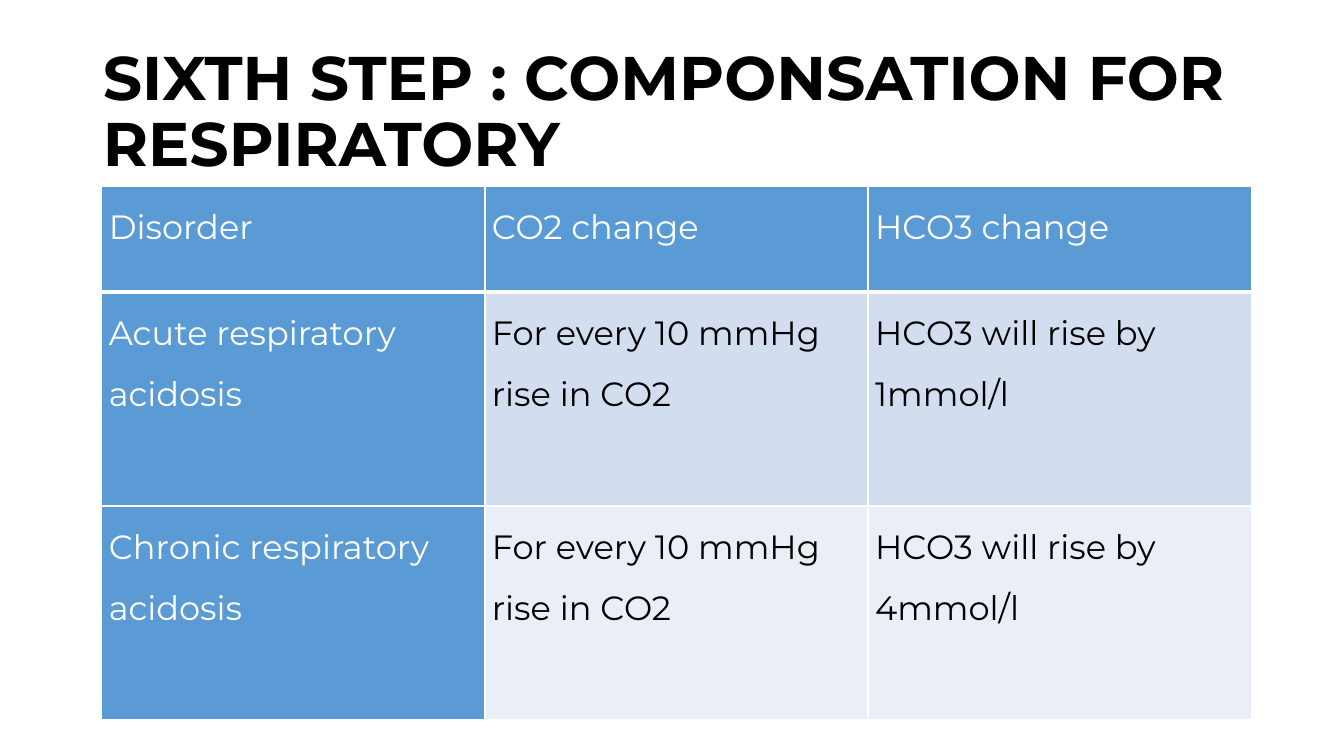
from lxml.etree import SubElement as Sub
from pptx import Presentation
from pptx.dml.color import RGBColor
from pptx.enum.text import MSO_ANCHOR as Anchor, MSO_AUTO_SIZE as Fit, PP_ALIGN as Align
from pptx.oxml.ns import qn
from pptx.util import Emu, Pt

SCALE = 9144
WHITE, BLACK, BLUE = "FFFFFF", "000000", "5B9BD5"
BANDS = ["D2DEEF", "EAEFF7"]
ROWS = [
    ["Disorder", "CO2 change", "HCO3 change"],
    ["Acute respiratory acidosis", "For every 10 mmHg rise in CO2", "HCO3 will rise by 1mmol/l"],
    ["Chronic respiratory acidosis", "For every 10 mmHg rise in CO2", "HCO3 will rise by 4mmol/l"],
]


def px(n):
    return Emu(n * SCALE)


def rgb(hue):
    return RGBColor.from_string(hue)


class Deck:
    font = "Montserrat"

    def __init__(self, wide, high):
        self.prs = Presentation()
        self.prs.slide_width, self.prs.slide_height = px(wide), px(high)
        self.slide = self.prs.slides.add_slide(self.prs.slide_layouts[5])

    def label(self, frame, text, size, hue, gap, bold=False):
        para = frame.paragraphs[0]
        para.alignment = Align.LEFT
        para.line_spacing = gap
        run = para.add_run()
        run.text = text
        run.font.name = self.font
        run.font.size = Pt(size)
        run.font.bold = bold
        run.font.color.rgb = rgb(hue)

    def title(self, text, left, top, wide, high):
        box = self.slide.shapes.title
        box.left, box.top, box.width, box.height = map(px, (left, top, wide, high))
        frame = box.text_frame
        frame.word_wrap = True
        frame.auto_size = Fit.NONE
        frame.vertical_anchor = Anchor.MIDDLE
        self.label(frame, text, 44, BLACK, 0.9, True)

    def edge(self, cell, base):
        props = cell._tc.get_or_add_tcPr()
        for side, width in zip("LRTB", (1, 1, 1, base)):
            line = Sub(props, qn(f"a:ln{side}"), w=str(Pt(width)))
            fill = Sub(line, qn("a:solidFill"))
            Sub(fill, qn("a:srgbClr"), val=WHITE)

    def cell(self, cell, text, fill, hue, base):
        cell.margin_left = cell.margin_right = px(7)
        cell.margin_top = cell.margin_bottom = 0
        self.edge(cell, base)
        cell.fill.solid()
        cell.fill.fore_color.rgb = rgb(fill)
        self.label(cell.text_frame, text, 24, hue, 1.5)

    def table(self, rows, left, top, wide, highs):
        count = len(rows[0])
        area = map(px, (left, top, wide * count, sum(highs)))
        grid = self.slide.shapes.add_table(len(rows), count, *area).table
        grid.first_row = grid.horz_banding = False
        for col in grid.columns:
            col.width = px(wide)
        for r, texts in enumerate(rows):
            grid.rows[r].height = px(highs[r])
            for c, text in enumerate(texts):
                head = r == 0 or c == 0
                fill = BLUE if head else BANDS[(r - 1) % 2]
                hue = WHITE if head else BLACK
                self.cell(grid.cell(r, c), text, fill, hue, 3 if r == 0 else 1)


def main():
    deck = Deck(1333, 750)
    deck.title("SIXTH STEP : COMPONSATION FOR RESPIRATORY", 92, 40, 1150, 145)
    deck.table(ROWS, 101, 185, 380, [105, 212, 212])
    deck.prs.save("out.pptx")


if __name__ == "__main__":
    main()
